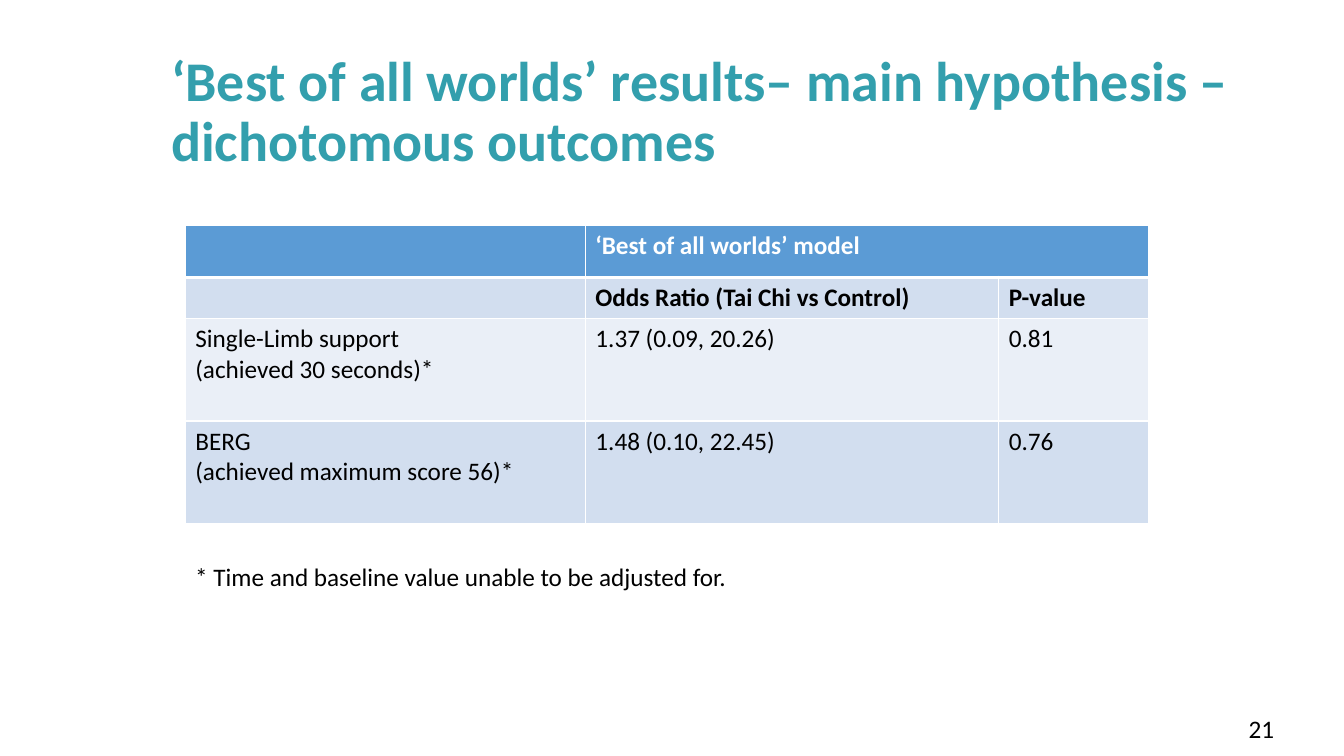
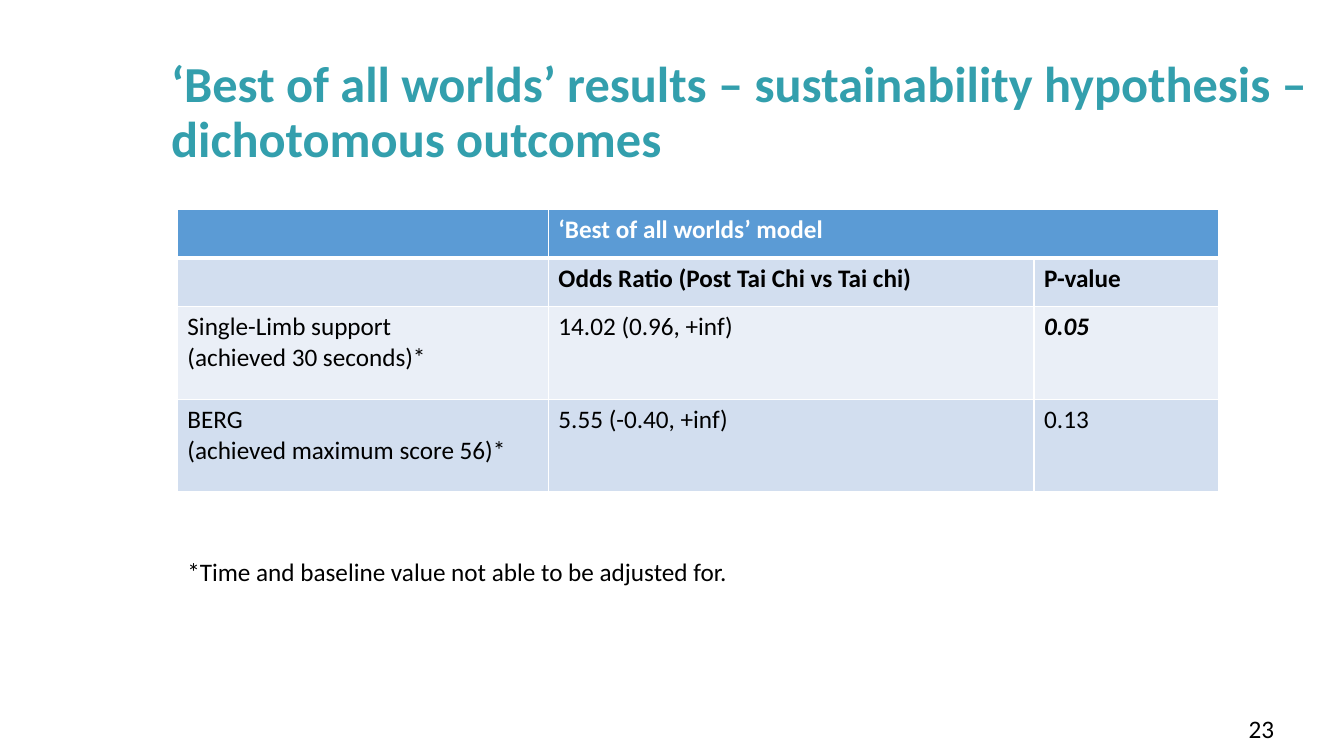
"""Build two result slides on dichotomous outcomes."""
import pptx
import pptx.dml.color
import pptx.enum.text
import pptx.oxml.ns
import pptx.util
from lxml import etree
from pptx.util import Cm, Pt

RGBColor = pptx.dml.color.RGBColor
TEAL = RGBColor(0x33, 0x9F, 0xAD)
HEADER_BLUE = RGBColor(0x5B, 0x9B, 0xD5)
BAND_DARK = RGBColor(0xD2, 0xDE, 0xEF)
BAND_LIGHT = RGBColor(0xEA, 0xEF, 0xF7)
WHITE = RGBColor(0xFF, 0xFF, 0xFF)
BLACK = RGBColor(0x00, 0x00, 0x00)

FONT = "Calibri"
BODY_SIZE = 18
ROW_FILLS = [HEADER_BLUE, BAND_DARK, BAND_LIGHT, BAND_DARK]
THIN, THICK = 1, 3
MODEL = "‘Best of all worlds’ model"
LIMB_SUPPORT = "Single-Limb support\n(achieved 30 seconds)*"
BERG = "BERG\n(achieved maximum score 56)*"

RESULTS = [
    {
        "number": "21",
        "title": "‘Best of all worlds’ results– main hypothesis –dichotomous outcomes",
        "title_size": 40,
        "table_at": (4.67, 5.69),
        "columns": [10.08, 10.42, 3.78],
        "heights": [1.3, 1.04, 2.58, 2.58],
        "rows": [
            ["", MODEL, ""],
            ["", "Odds Ratio (Tai Chi vs Control)", "P-value"],
            [LIMB_SUPPORT, "1.37 (0.09, 20.26)", "0.81"],
            [BERG, "1.48 (0.10, 22.45)", "0.76"],
        ],
        "significant": [],
        "footnote": "* Time and baseline value unable to be adjusted for.",
        "footnote_at": (4.67, 14.02),
    },
    {
        "number": "23",
        "title": "‘Best of all worlds’ results – sustainability hypothesis – dichotomous outcomes",
        "title_size": 36,
        "table_at": (4.47, 5.28),
        "columns": [9.35, 12.24, 4.65],
        "heights": [1.22, 1.22, 2.34, 2.34],
        "rows": [
            ["", MODEL, ""],
            ["", "Odds Ratio (Post Tai Chi vs Tai chi)", "P-value"],
            [LIMB_SUPPORT, "14.02 (0.96, +inf)", "0.05"],
            [BERG, "5.55 (-0.40, +inf)", "0.13"],
        ],
        "significant": ["0.05"],
        "footnote": "*Time and baseline value not able to be adjusted for.",
        "footnote_at": (4.47, 13.89),
    },
]


def add_run(paragraph, text, size=BODY_SIZE, color=BLACK, bold=False, italic=False):
    """Append one formatted run to a paragraph."""
    run = paragraph.add_run()
    run.text = text
    font = run.font
    font.name, font.size = FONT, Pt(size)
    font.bold, font.italic = bold, italic
    font.color.rgb = color


def set_borders(cell, top, bottom):
    """Draw white lines on all four sides of a cell."""
    properties = cell._tc.get_or_add_tcPr()
    for side, points in (("L", THIN), ("R", THIN), ("T", top), ("B", bottom)):
        line = etree.SubElement(properties, pptx.oxml.ns.qn(f"a:ln{side}"), w=str(Pt(points)))
        fill = etree.SubElement(line, pptx.oxml.ns.qn("a:solidFill"))
        etree.SubElement(fill, pptx.oxml.ns.qn("a:srgbClr"), val=str(WHITE))


def place_title(slide, text, size, left, top, width, height):
    """Move and format the title placeholder."""
    title = slide.shapes.title
    title.left, title.top, title.width, title.height = left, top, width, height
    frame = title.text_frame
    frame.auto_size = pptx.enum.text.MSO_AUTO_SIZE.NONE
    frame.word_wrap = True
    frame.vertical_anchor = pptx.enum.text.MSO_ANCHOR.MIDDLE
    paragraph = frame.paragraphs[0]
    paragraph.alignment = pptx.enum.text.PP_ALIGN.LEFT
    paragraph.line_spacing = 0.9
    add_run(paragraph, text, size, TEAL, bold=True)


def place_text(slide, text, left, top, width, height, wrap=True):
    """Add a single-paragraph text box."""
    frame = slide.shapes.add_textbox(left, top, width, height).text_frame
    frame.word_wrap = wrap
    add_run(frame.paragraphs[0], text)


def fill_cell(cell, text, row, significant):
    """Write and format one table cell according to its row."""
    set_borders(cell, THICK if row == 1 else THIN, THICK if row == 0 else THIN)
    cell.fill.solid()
    cell.fill.fore_color.rgb = ROW_FILLS[row]
    frame = cell.text_frame
    for index, line in enumerate(text.split("\n") if text else []):
        paragraph = frame.add_paragraph() if index else frame.paragraphs[0]
        add_run(paragraph, line, color=WHITE if row == 0 else BLACK,
                bold=row < 2 or significant, italic=significant)


def place_results_table(slide, result, left, top):
    """Add the odds ratio table with its merged model heading."""
    rows, columns, heights = result["rows"], result["columns"], result["heights"]
    table = slide.shapes.add_table(len(rows), len(columns), left, top,
                                   Cm(sum(columns)), Cm(sum(heights))).table
    for column, width in zip(table.columns, columns):
        column.width = Cm(width)
    for row, height in zip(table.rows, heights):
        row.height = Cm(height)
    for row, texts in enumerate(rows):
        for column, text in enumerate(texts):
            fill_cell(table.cell(row, column), text, row, text in result["significant"])
    table.cell(0, 1).merge(table.cell(0, 2))


def add_result_slide(deck, result):
    """Add one slide with title, table, footnote and number."""
    slide = deck.slides.add_slide(deck.slide_layouts[5])
    place_text(slide, result["number"], Cm(31.22), Cm(17.86), Cm(1.27), Cm(1.02), wrap=False)
    place_title(slide, result["title"], result["title_size"],
                Cm(4.06), Cm(1.02), Cm(29.21), Cm(3.68))
    place_results_table(slide, result, *map(Cm, result["table_at"]))
    place_text(slide, result["footnote"], *map(Cm, result["footnote_at"]), Cm(18.36), Cm(1.8))


def main():
    """Create and save the presentation."""
    deck = pptx.Presentation()
    deck.slide_width, deck.slide_height = Cm(33.87), Cm(19.05)
    for result in RESULTS:
        add_result_slide(deck, result)
    deck.save("out.pptx")


if __name__ == "__main__":
    main()
